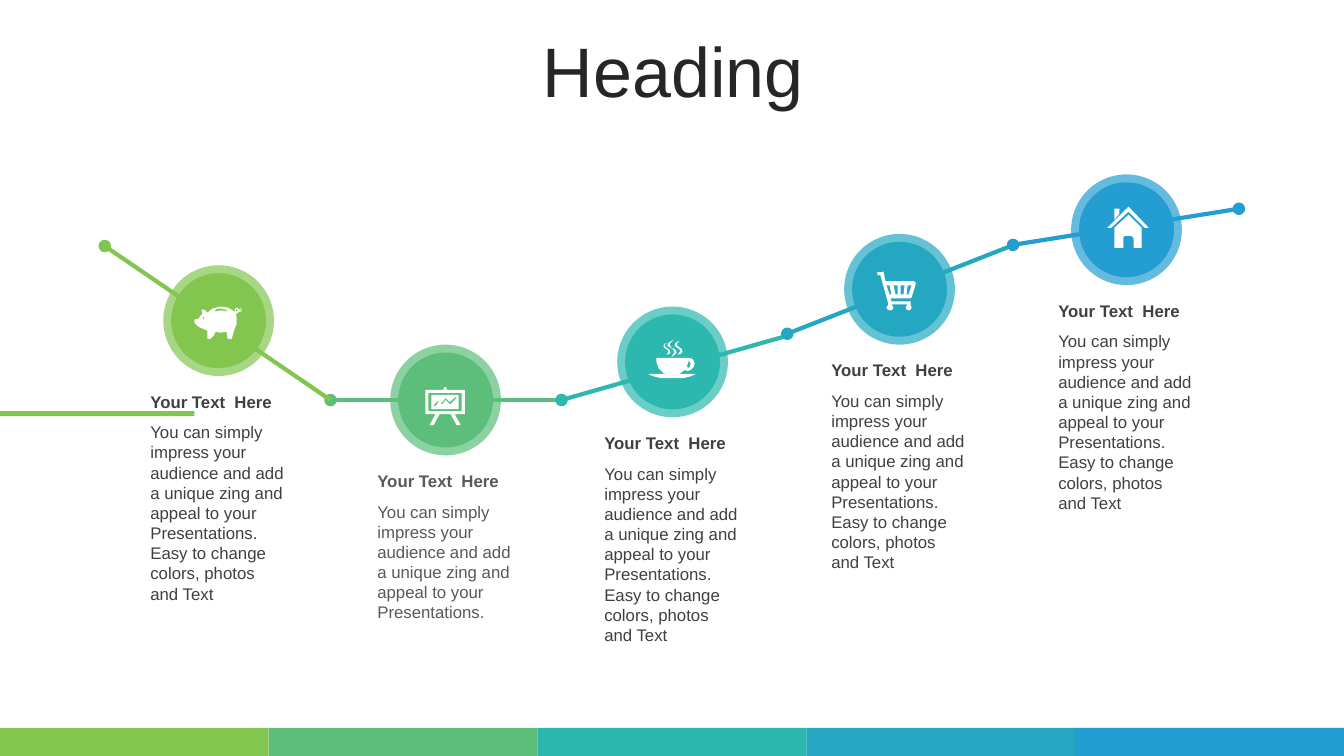
from dataclasses import dataclass

import lxml.etree
import pptx
import pptx.dml.color
import pptx.enum.shapes
import pptx.enum.text
import pptx.oxml.ns
import pptx.util

Cm = pptx.util.Cm
Shapes = pptx.enum.shapes.MSO_SHAPE
Align = pptx.enum.text.PP_ALIGN
Anchor = pptx.enum.text.MSO_ANCHOR
Point = tuple[float, float]

COLORS = {
    "lime": "82C650", "green": "5CBE7A", "teal": "2CB8AE", "cyan": "24A8C2", "blue": "249ED2",
    "heading": "262626", "dark": "404040", "gray": "595959", "white": "FFFFFF",
}
SLIDE_WIDTH, SLIDE_HEIGHT = 33.87, 19.05
FIRST_CENTER, STAGE_STEP = 5.51, 5.72
HALO_SIZE, DISC_SIZE = 2.79, 2.39
TEXT_WIDTH, LABEL_HEIGHT = 3.89, 0.77
ICON_UNIT = 0.0254
LABEL = "Your Text  Here"
SHORT_BODY = ("You can simply impress your audience and add a unique zing "
              "and appeal to your Presentations.")
LONG_BODY = SHORT_BODY + " Easy to change colors, photos and Text"


@dataclass(frozen=True)
class Icon:
    offset: Point
    contours: list[list[Point]]


@dataclass(frozen=True)
class Stage:
    color: str
    center_y: float
    start: Point
    end: Point
    icon: Icon
    body: str = LONG_BODY
    body_height: float = 4.87
    text_color: str = "dark"


PIG = Icon((-24, -14), [
    [(9, 10), (8, 11), (9, 13), (10, 11)],
    [(42, 2), (41, 4), (42, 5), (43, 4)],
    [(27, 2), (23, 2), (20, 4), (21, 5), (25, 4), (29, 4), (32, 5), (33, 4), (30, 3)],
    [(26, 0), (33, 1), (40, 5), (41, 7), (40, 3), (42, 1), (45, 3), (44, 4), (46, 4), (46, 1),
     (47, 3), (46, 5), (43, 6), (41, 8), (42, 11), (42, 17), (40, 22), (37, 32), (33, 32),
     (32, 25), (26, 26), (21, 25), (19, 29), (16, 32), (13, 32), (13, 24), (4, 20), (0, 16),
     (0, 13), (4, 12), (8, 7), (7, 3), (10, 3), (13, 6), (18, 2)],
])
EASEL = Icon((-20, -13), [
    [(30, 10), (24, 15), (20, 11), (16, 16), (12, 14), (8, 18), (9, 19), (10, 19), (13, 15),
     (16, 17), (17, 17), (20, 13), (24, 17), (25, 17), (31, 11)],
    [(6, 8), (33, 8), (33, 22), (6, 22)],
    [(3, 6), (3, 24), (36, 24), (36, 6)],
    [(20, 0), (21, 1), (21, 3), (39, 3), (39, 27), (29, 27), (35, 38), (31, 38), (25, 27),
     (14, 27), (8, 38), (4, 38), (10, 27), (0, 27), (0, 3), (18, 3), (18, 1)],
])
CUP = Icon((-24, -22), [
    [(40, 21), (38, 27), (40, 28), (41, 27), (42, 24), (41, 22)],
    [(40, 18), (44, 19), (46, 23), (45, 27), (42, 30), (39, 31), (36, 30), (32, 33), (29, 34),
     (47, 34), (43, 36), (35, 38), (12, 38), (4, 36), (0, 34), (19, 34), (15, 33), (10, 28),
     (8, 22), (8, 18)],
    [(19, 3), (17, 4), (16, 6), (18, 8), (21, 10), (22, 12), (21, 14), (18, 15), (20, 12),
     (19, 10), (16, 8), (15, 6), (16, 4)],
    [(31, 1), (29, 3), (28, 5), (30, 7), (33, 9), (34, 12), (32, 14), (29, 15), (32, 11),
     (30, 9), (26, 6), (27, 3)],
    [(25, 0), (22, 3), (21, 5), (23, 8), (27, 10), (28, 13), (26, 15), (23, 17), (26, 12),
     (24, 9), (19, 6), (20, 3)],
])
CART = Icon((-22, -18), [
    [(30, 14), (29, 23), (31, 23), (34, 14)],
    [(23, 14), (23, 23), (26, 23), (27, 14)],
    [(16, 14), (18, 23), (20, 23), (20, 14)],
    [(9, 14), (12, 23), (14, 23), (12, 14)],
    [(6, 0), (8, 10), (36, 10), (38, 11), (38, 13), (34, 26), (33, 27), (13, 27), (14, 30),
     (33, 30), (33, 33), (34, 36), (33, 38), (31, 39), (29, 38), (28, 36), (30, 33), (14, 33),
     (16, 36), (15, 38), (13, 39), (10, 38), (9, 36), (11, 33), (3, 4), (0, 4), (0, 1), (5, 1)],
])
HOUSE = Icon((-19, -23), [
    [(21, 8), (34, 21), (34, 41), (26, 41), (26, 32), (25, 30), (23, 29), (18, 29), (16, 30),
     (16, 41), (7, 41), (7, 21)],
    [(7, 2), (12, 2), (12, 7), (7, 13)],
    [(21, 0), (41, 21), (37, 21), (21, 5), (4, 21), (0, 21)],
])
STAGES = [
    Stage("lime", 8.08, (2.64, 6.2), (8.33, 10.08), PIG),
    Stage("green", 10.08, (8.33, 10.08), (14.02, 10.08), EASEL, SHORT_BODY, 3.32, "gray"),
    Stage("teal", 9.12, (14.15, 10.08), (19.84, 8.46), CUP),
    Stage("cyan", 7.29, (19.84, 8.41), (25.55, 6.17), CART),
    Stage("blue", 5.79, (25.53, 6.17), (31.22, 5.26), HOUSE),
]


def rgb(color: str) -> pptx.dml.color.RGBColor:
    return pptx.dml.color.RGBColor.from_string(COLORS[color])


def paint(shape, color: str, alpha: int = 100) -> None:
    shape.shadow.inherit = False
    shape.fill.solid()
    shape.fill.fore_color.rgb = rgb(color)
    shape.line.fill.background()
    if alpha < 100:
        color_element = next(shape._element.spPr.iter(pptx.oxml.ns.qn("a:srgbClr")))
        lxml.etree.SubElement(color_element, pptx.oxml.ns.qn("a:alpha"), val=str(alpha * 1000))


def add_bar(slide, left: float, top: float, width: float, height: float, color: str) -> None:
    paint(slide.shapes.add_shape(Shapes.RECTANGLE, Cm(left), Cm(top), Cm(width), Cm(height)), color)


def add_circle(slide, center: Point, size: float, color: str, alpha: int = 100) -> None:
    left, top = (Cm(value - size / 2) for value in center)
    paint(slide.shapes.add_shape(Shapes.OVAL, left, top, Cm(size), Cm(size)), color, alpha)


def add_link(slide, stage: Stage, dots: list[str]) -> None:
    connector = slide.shapes.add_connector(
        pptx.enum.shapes.MSO_CONNECTOR.STRAIGHT, *map(Cm, stage.start + stage.end))
    connector.line.color.rgb = rgb(stage.color)
    connector.line.width = pptx.util.Pt(3)
    properties = connector._element.spPr
    line = properties.find(pptx.oxml.ns.qn("a:ln"))
    for dot in dots:
        lxml.etree.SubElement(line, pptx.oxml.ns.qn(dot), type="oval")
    lxml.etree.SubElement(properties, pptx.oxml.ns.qn("a:effectLst"))


def add_icon(slide, icon: Icon, center: Point) -> None:
    first, *others = icon.contours
    builder = slide.shapes.build_freeform(*first[0], scale=Cm(ICON_UNIT))
    builder.add_line_segments(first[1:], close=True)
    for contour in others:
        builder.move_to(*contour[0])
        builder.add_line_segments(contour[1:], close=True)
    left, top = (Cm(middle + shift * ICON_UNIT) for middle, shift in zip(center, icon.offset))
    paint(builder.convert_to_shape(left, top), "white")


def add_text(slide, text: str, left: float, top: float, width: float, height: float, *,
             color: str, size: float = 12, bold: bool = False, align=Align.LEFT,
             anchor=Anchor.TOP, line_spacing: float = 1, space_before: float = 0) -> None:
    frame = slide.shapes.add_textbox(Cm(left), Cm(top), Cm(width), Cm(height)).text_frame
    frame.word_wrap = True
    frame.vertical_anchor = anchor
    paragraph = frame.paragraphs[0]
    paragraph.alignment = align
    paragraph.line_spacing = line_spacing
    paragraph.space_before = pptx.util.Pt(space_before)
    run = paragraph.add_run()
    run.text = text
    run.font.name = "Arial"
    run.font.size = pptx.util.Pt(size)
    run.font.bold = bold
    run.font.color.rgb = rgb(color)


def main() -> None:
    presentation = pptx.Presentation()
    presentation.slide_width, presentation.slide_height = Cm(SLIDE_WIDTH), Cm(SLIDE_HEIGHT)
    slide = presentation.slides.add_slide(presentation.slide_layouts[6])

    bar_width = SLIDE_WIDTH / len(STAGES)
    for index, stage in enumerate(STAGES):
        add_bar(slide, index * bar_width, 18.34, bar_width, 0.71, stage.color)
    add_bar(slide, 0, 10.36, 4.9, 0.13, "lime")
    for stage in STAGES[1:] + STAGES[:1]:
        add_link(slide, stage, ["a:headEnd", "a:tailEnd"] if stage is STAGES[-1] else ["a:headEnd"])

    add_text(slide, "Heading", 0.89, 0.94, 32.16, 2.01, color="heading", size=50,
             align=Align.CENTER, anchor=Anchor.MIDDLE, line_spacing=0.8, space_before=10)
    for index, stage in enumerate(STAGES):
        center = (FIRST_CENTER + index * STAGE_STEP, stage.center_y)
        add_circle(slide, center, HALO_SIZE, stage.color, alpha=70)
        add_circle(slide, center, DISC_SIZE, stage.color)
        add_icon(slide, stage.icon, center)
        text_left, label_top = center[0] - 1.97, center[1] + 1.66
        add_text(slide, LABEL, text_left, label_top, TEXT_WIDTH, LABEL_HEIGHT,
                 color=stage.text_color, bold=True)
        add_text(slide, stage.body, text_left, label_top + LABEL_HEIGHT, TEXT_WIDTH,
                 stage.body_height, color=stage.text_color)

    presentation.save("out.pptx")


if __name__ == "__main__":
    main()
